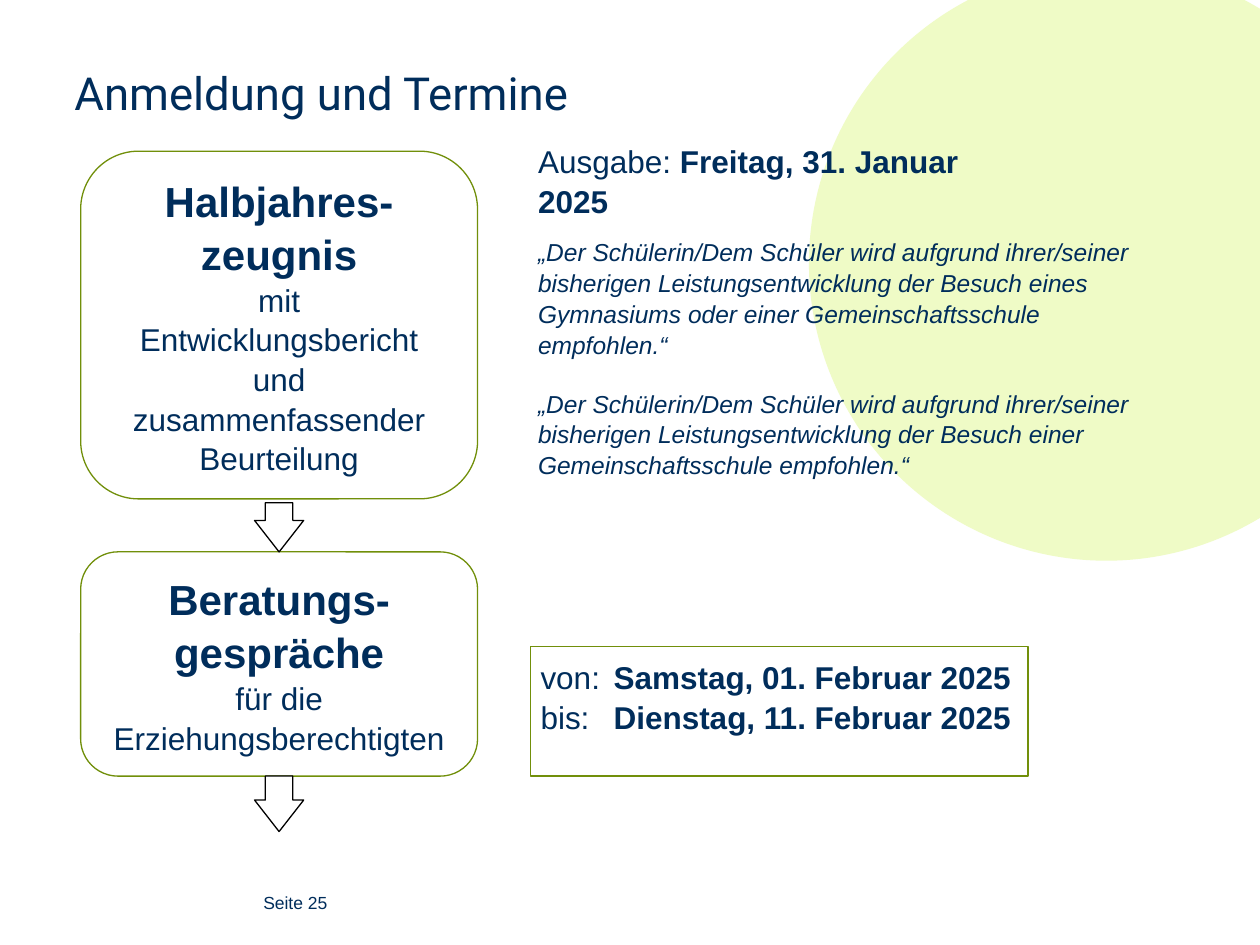
from pptx import Presentation
from pptx.dml.color import RGBColor
from pptx.enum import shapes, text
from pptx.oxml import parse_xml
from pptx.oxml.ns import nsdecls
from pptx.util import Inches, Pt

NAVY = RGBColor(0x00, 0x2D, 0x5B)
OLIVE = RGBColor(0x71, 0x8F, 0x0A)
LIME = RGBColor(0xEF, 0xFB, 0xC6)
WHITE = RGBColor(0xFF, 0xFF, 0xFF)
BLACK = RGBColor(0x00, 0x00, 0x00)

STEP_LEFT, STEP_WIDTH = 0.64, 3.15
ARROW_WIDTH = 0.39
NOTE_LEFT = 4.19

STEPS = [
    (1.2, 2.76, 0.39, "Halbjahres-zeugnis",
     "mit\vEntwicklungsbericht\vund zusammenfassender Beurteilung"),
    (4.38, 1.78, 0.2, "Beratungs-gespräche", "für die Erziehungsberechtigten"),
]
ARROWS = [(3.99, 0.39), (6.16, 0.44)]
QUOTES = [
    (1.87, "„Der Schülerin/Dem Schüler wird aufgrund ihrer/seiner bisherigen "
           "Leistungsentwicklung der Besuch eines Gymnasiums oder einer "
           "Gemeinschaftsschule empfohlen.“"),
    (2.95, "„Der Schülerin/Dem Schüler wird aufgrund ihrer/seiner bisherigen "
           "Leistungsentwicklung der Besuch einer Gemeinschaftsschule empfohlen.“"),
]
ISSUE = [("Ausgabe: ", {}), ("Freitag, 31. Januar 2025", {"bold": True})]
PERIOD = [
    ("von:\t", {}), ("Samstag, 01. Februar 2025\v", {"bold": True}),
    ("bis:\t", {}), ("Dienstag, 11. Februar 2025", {"bold": True}),
]


def add_shape(page, kind, area, fill, line=None):
    shape = page.shapes.add_shape(kind, *map(Inches, area))
    shape.shadow.inherit = False
    shape.fill.solid()
    shape.fill.fore_color.rgb = fill
    if line is None:
        shape.line.fill.background()
    else:
        shape.line.color.rgb = line
        shape.line.width = Pt(0.75)
    return shape


def add_box(page, area):
    return page.shapes.add_textbox(*map(Inches, area))


def write(box, paragraphs, size=18, font="Arial", spacing=1.05, inset=(0.08, 0.08),
          align=text.PP_ALIGN.LEFT, anchor=text.MSO_ANCHOR.MIDDLE, tab=None, **style):
    frame = box.text_frame
    frame.word_wrap = True
    frame.vertical_anchor = anchor
    frame.margin_left = frame.margin_right = Inches(inset[0])
    frame.margin_top = frame.margin_bottom = Inches(inset[1])
    for index, runs in enumerate(paragraphs):
        para = frame.add_paragraph() if index else frame.paragraphs[0]
        para.alignment = align
        para.line_spacing = spacing
        if tab is not None:
            para._p.get_or_add_pPr().append(parse_xml(
                f'<a:tabLst {nsdecls("a")}><a:tab pos="{Inches(tab)}" algn="l"/></a:tabLst>'))
        for words, changes in runs:
            look = {"size": size, **style, **changes}
            pieces = words.split("\v")
            for number, piece in enumerate(pieces):
                if number:
                    para.add_line_break()
                if piece:
                    span = para.add_run()
                    span.text = piece
                    span.font.name = font
                    span.font.size = Pt(look["size"])
                    span.font.color.rgb = NAVY
                    span.font.bold = look.get("bold", False)
                    span.font.italic = look.get("italic", False)


def main():
    deck = Presentation()
    deck.slide_width, deck.slide_height = Inches(10), Inches(7.5)
    page = deck.slides.add_slide(deck.slide_layouts[6])
    kinds = shapes.MSO_SHAPE

    write(add_box(page, (2.09, 7.04, 1.26, 0.24)), [[("Seite 25", {})]],
          size=10, spacing=1, inset=(0, 0))
    add_shape(page, kinds.OVAL, (6.42, -0.27, 4.72, 4.72), LIME)

    for top, height, margin, heading, detail in STEPS:
        step = add_shape(page, kinds.ROUNDED_RECTANGLE,
                         (STEP_LEFT, top, STEP_WIDTH, height), WHITE, OLIVE)
        write(step, [[(heading, {"size": 24, "bold": True})], [(detail, {})]],
              inset=(0.06, margin), align=text.PP_ALIGN.CENTER)

    write(add_box(page, (NOTE_LEFT, 1.2, 4.11, 0.46)), [ISSUE])
    for top, quote in QUOTES:
        write(add_box(page, (NOTE_LEFT, top, 5.11, 0.98)), [[(quote, {})]],
              size=14, italic=True)

    period = add_shape(page, kinds.RECTANGLE, (4.21, 5.13, 3.95, 1.03), WHITE, OLIVE)
    write(period, [PERIOD], anchor=text.MSO_ANCHOR.TOP, tab=0.58)

    arrow_left = STEP_LEFT + (STEP_WIDTH - ARROW_WIDTH) / 2
    for top, height in ARROWS:
        arrow = add_shape(page, kinds.DOWN_ARROW,
                          (arrow_left, top, ARROW_WIDTH, height), WHITE, BLACK)
        arrow.adjustments[0] = 0.56
        arrow.adjustments[1] = 0.64

    write(add_box(page, (0.59, 0.58, 8.82, 0.89)), [[("Anmeldung und Termine", {})]],
          size=26, font="Roboto", spacing=0.85, inset=(0, 0), anchor=text.MSO_ANCHOR.TOP)
    deck.save("out.pptx")


if __name__ == "__main__":
    main()
